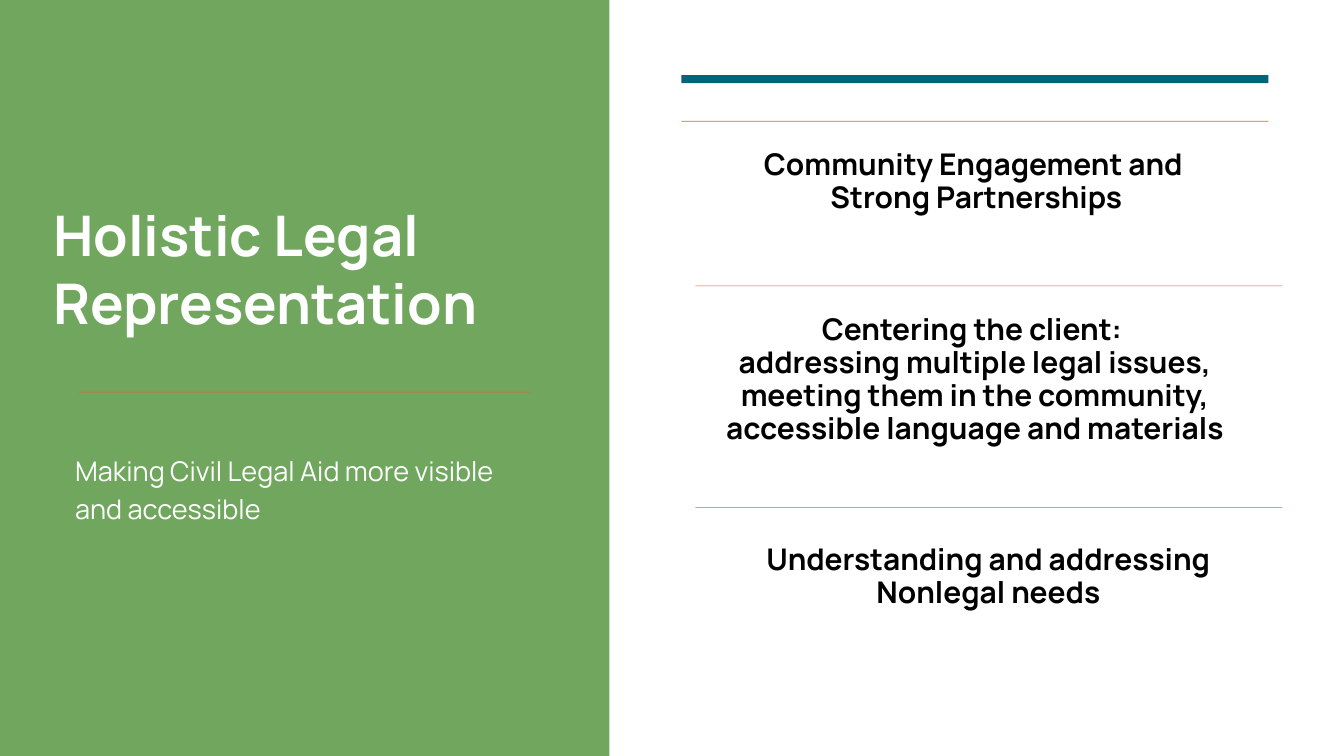
from pptx import Presentation
from pptx.dml.color import RGBColor
from pptx.enum.shapes import MSO_SHAPE
from pptx.enum.text import MSO_ANCHOR, MSO_AUTO_SIZE, PP_ALIGN
from pptx.util import Pt

GREEN = RGBColor(0x70, 0xA6, 0x5D)
ORANGE = RGBColor(0xF1, 0x5A, 0x29)
TEAL = RGBColor(0x00, 0x64, 0x7B)
WHITE = RGBColor(0xFF, 0xFF, 0xFF)
BLACK = RGBColor(0x00, 0x00, 0x00)
FONT = "Manrope"
RULE_HEIGHT = 0.7

# Left, top, width and height of the regions, in points
SLIDE_WIDTH, SLIDE_HEIGHT = 1440, 810
PANEL_BOX = (0, 0, 653, SLIDE_HEIGHT)
POINTS_BOX = (730, 80.6, 645, 573)

# Offsets in the points region: rule left, rule top, text left, text top,
# text height, then the paragraphs
POINTS = [
    (0, 49, 28.9, 78.5, 70.6,
     ["Community Engagement and ", "Strong Partnerships"]),
    (15, 225.4, 27.4, 254.9, 141.1,
     ["Centering the client: ",
      "addressing multiple legal issues, meeting them in the community, "
      "accessible language and materials"]),
    (15, 463, 41.8, 501.2, 70.6,
     ["Understanding and addressing Nonlegal needs"]),
]
POINT_TEXT_WIDTH = 574.6


def add_bar(slide, left, top, width, height, color):
    bar = slide.shapes.add_shape(
        MSO_SHAPE.RECTANGLE, Pt(left), Pt(top), Pt(width), Pt(height))
    bar.shadow.inherit = False
    bar.fill.solid()
    bar.fill.fore_color.rgb = color
    bar.line.fill.background()


def place(shape, left, top, width, height):
    shape.left, shape.top = Pt(left), Pt(top)
    shape.width, shape.height = Pt(width), Pt(height)


def write_text(shape, lines, size, leading, color, bold, alignment):
    frame = shape.text_frame
    frame.word_wrap = True
    frame.auto_size = MSO_AUTO_SIZE.NONE
    frame.vertical_anchor = MSO_ANCHOR.TOP
    frame.margin_left = frame.margin_right = Pt(0)
    frame.margin_top = frame.margin_bottom = Pt(0)
    for index, line in enumerate(lines):
        paragraph = frame.add_paragraph() if index else frame.paragraphs[0]
        paragraph.alignment = alignment
        paragraph.line_spacing = Pt(leading)
        paragraph.space_before = Pt(0)
        run = paragraph.add_run()
        run.text = line
        run.font.name = FONT
        run.font.size = Pt(size)
        run.font.bold = bold
        run.font.color.rgb = color


def build_title_panel(slide, box):
    left, top, width, height = box
    add_bar(slide, left, top, width, height, GREEN)
    add_bar(slide, left + 84, top + 419.8, 484, RULE_HEIGHT, ORANGE)

    # Title and subtitle, brought in front of the panel
    title, subtitle = slide.shapes.title, slide.placeholders[1]
    for placeholder in (subtitle, title):
        placeholder.element.getparent().append(placeholder.element)
    place(title, left + 57, top + 215.3, 539, 145.4)
    write_text(title, ["Holistic Legal Representation"],
               60, 72, WHITE, True, PP_ALIGN.LEFT)
    place(subtitle, left + 80.6, top + 481, 484, 79.2)
    write_text(subtitle, ["Making Civil Legal Aid more visible and accessible"],
               29, 40.6, WHITE, False, PP_ALIGN.LEFT)


def build_points(slide, box):
    left, top, width, _ = box
    # Heavy bar across the head of the region
    add_bar(slide, left, top, width * 0.975, 8.6, TEAL)

    # Each point is a thin rule with centred text below
    for rule_left, rule_top, text_left, text_top, text_height, lines in POINTS:
        add_bar(slide, left + rule_left, top + rule_top, width * 0.975,
                RULE_HEIGHT, ORANGE)
        text_box = slide.shapes.add_textbox(
            Pt(left + text_left), Pt(top + text_top),
            Pt(POINT_TEXT_WIDTH), Pt(text_height))
        write_text(text_box, lines, 32, 35.4, BLACK, True, PP_ALIGN.CENTER)


def main():
    presentation = Presentation()
    presentation.slide_width = Pt(SLIDE_WIDTH)
    presentation.slide_height = Pt(SLIDE_HEIGHT)
    slide = presentation.slides.add_slide(presentation.slide_layouts[0])
    slide.background.fill.solid()
    slide.background.fill.fore_color.rgb = WHITE
    build_title_panel(slide, PANEL_BOX)
    build_points(slide, POINTS_BOX)
    presentation.save("out.pptx")


if __name__ == "__main__":
    main()
